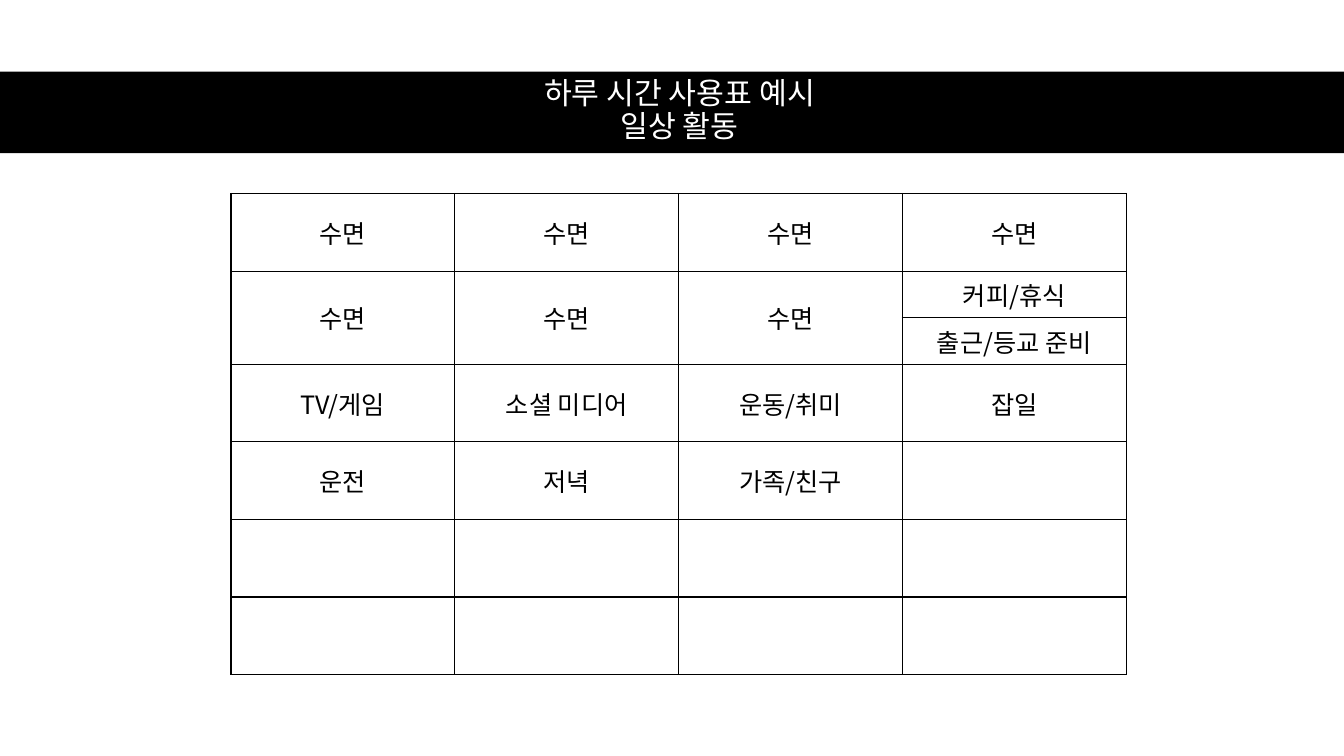
from lxml import etree
from pptx import Presentation
from pptx.dml.color import RGBColor
from pptx.enum.shapes import MSO_SHAPE
from pptx.enum.text import MSO_ANCHOR, MSO_AUTO_SIZE, PP_ALIGN
from pptx.oxml.ns import qn
from pptx.util import Inches, Pt

RECTANGLE = MSO_SHAPE.RECTANGLE
MIDDLE = MSO_ANCHOR.MIDDLE
NO_AUTOFIT = MSO_AUTO_SIZE.NONE
CENTER = PP_ALIGN.CENTER
BLACK = RGBColor(0x00, 0x00, 0x00)
WHITE = RGBColor(0xFF, 0xFF, 0xFF)
FONT = "Noto Sans CJK KR"
TITLE_ONLY = 5

TITLE = "하루 시간 사용표 예시\v일상 활동"
ACTIVITIES = [
    ["수면", "수면", "수면", "수면"],
    ["수면", "수면", "수면", "커피/휴식"],
    ["", "", "", "출근/등교 준비"],
    ["TV/게임", "소셜 미디어", "운동/취미", "잡일"],
    ["운전", "저녁", "가족/친구", ""],
    ["", "", "", ""],
    ["", "", "", ""],
]
ROW_HEIGHTS = [0.77, 0.38, 0.38, 0.77, 0.77, 0.77, 0.77]
COLUMN_WIDTH = 2.22
SPLIT_ROW = 1
MERGED_COLUMNS = range(3)


def write_text(frame, text, size=18, color=BLACK, spacing=None):
    """Write one centred paragraph in the slide's font."""
    frame.text = text
    para = frame.paragraphs[0]
    para.alignment = CENTER
    para.line_spacing = spacing
    for span in para.runs:
        span.font.size = Pt(size)
        span.font.name = FONT
        span.font.color.rgb = color
        east_asian = etree.SubElement(span.font._element, qn("a:ea"))
        east_asian.set("typeface", FONT)


class SlideBuilder:
    """Holds the current slide and draws its elements in one style."""

    def __init__(self, page):
        self.page = page

    def bar(self, left, top, width, height):
        box = self.page.shapes.add_shape(
            RECTANGLE, Inches(left), Inches(top), Inches(width), Inches(height))
        box.shadow.inherit = False
        box.fill.solid()
        box.fill.fore_color.rgb = BLACK
        box.line.fill.background()
        return box

    def title(self, text, left, top, width, height, behind):
        box = self.page.shapes.title
        box.left, box.top = Inches(left), Inches(top)
        box.width, box.height = Inches(width), Inches(height)
        frame = box.text_frame
        frame.word_wrap = True
        frame.auto_size = NO_AUTOFIT
        frame.vertical_anchor = MIDDLE
        write_text(frame, text, size=21.6, color=WHITE, spacing=0.9)
        behind.element.addnext(box.element)

    def borders(self, cell):
        properties = cell._tc.get_or_add_tcPr()
        for position, side in enumerate(("lnL", "lnR", "lnT", "lnB")):
            line = etree.Element(qn(f"a:{side}"), w=str(Pt(1)))
            fill = etree.SubElement(line, qn("a:solidFill"))
            etree.SubElement(fill, qn("a:srgbClr"), val=str(BLACK))
            properties.insert(position, line)

    def table(self, rows, left, top, column_width, row_heights):
        columns = len(rows[0])
        frame = self.page.shapes.add_table(
            len(rows), columns, Inches(left), Inches(top),
            Inches(column_width * columns), Inches(sum(row_heights)))
        table = frame.table
        table.first_row = False
        table.horz_banding = False
        for column in table.columns:
            column.width = Inches(column_width)
        for row, height in zip(table.rows, row_heights):
            row.height = Inches(height)
        for row, texts in zip(table.rows, rows):
            for cell, text in zip(row.cells, texts):
                cell.fill.background()
                cell.vertical_anchor = MIDDLE
                self.borders(cell)
                if text:
                    write_text(cell.text_frame, text)
        return table


def main():
    deck = Presentation()
    deck.slide_width, deck.slide_height = Inches(13.33), Inches(7.5)
    page = deck.slides.add_slide(deck.slide_layouts[TITLE_ONLY])
    builder = SlideBuilder(page)
    bar = builder.bar(0, 0.71, 13.33, 0.81)
    builder.title(TITLE, 0.61, 0.7, 12.26, 0.81, behind=bar)
    schedule = builder.table(ACTIVITIES, 2.29, 1.92, COLUMN_WIDTH, ROW_HEIGHTS)
    for column in MERGED_COLUMNS:
        schedule.cell(SPLIT_ROW, column).merge(schedule.cell(SPLIT_ROW + 1, column))
    deck.save("out.pptx")


if __name__ == "__main__":
    main()
